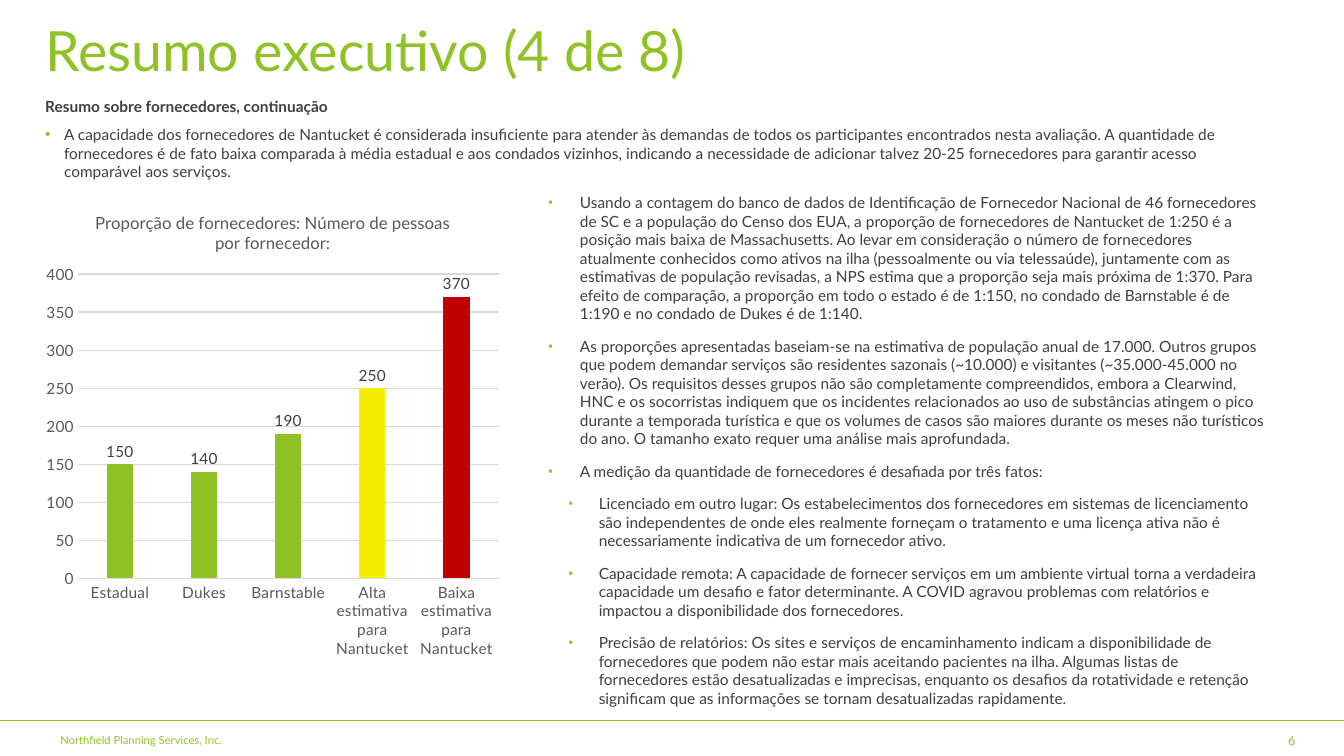
from dataclasses import dataclass

from lxml.etree import SubElement
from pptx import Presentation
from pptx.chart.data import CategoryChartData
from pptx.dml.color import RGBColor
from pptx.enum.chart import XL_CHART_TYPE, XL_LABEL_POSITION, XL_TICK_MARK
from pptx.enum.shapes import MSO_CONNECTOR
from pptx.enum.text import MSO_ANCHOR, MSO_AUTO_SIZE, PP_ALIGN
from pptx.oxml import parse_xml
from pptx.oxml.ns import nsdecls, qn
from pptx.util import Pt

GREEN = RGBColor(0x90, 0xC2, 0x26)
YELLOW = RGBColor(0xF4, 0xEE, 0x00)
RED = RGBColor(0xC0, 0x00, 0x00)
DARK = RGBColor(0x3F, 0x3F, 0x3F)
LABEL = RGBColor(0x40, 0x40, 0x40)
GRAY = RGBColor(0x59, 0x59, 0x59)
GRID = RGBColor(0xD9, 0xD9, 0xD9)
FACE = "Lato"
WIDE, HIGH = 960, 540
LEFT, TOP, RULE = 25.2, 134.6, 514.8


@dataclass
class Box:
    x: float
    y: float
    w: float
    h: float

    def spans(self) -> tuple:
        return Pt(self.x), Pt(self.y), Pt(self.w), Pt(self.h)


@dataclass
class Style:
    """Bullet paragraph: left margin, hang, mark, mark size and gap above."""
    margin: float
    hang: float
    mark: str
    scale: int
    gap: float


@dataclass
class Bar:
    name: str
    value: int
    color: RGBColor


@dataclass
class Note:
    box: Box
    text: str
    size: float
    align: PP_ALIGN
    wrap: bool


INTRO = Style(13.5, 13.5, "•", 100, 7.2)
LEVELS = [Style(22.5, 22.5, "▪", 80, 10), Style(36, 21.6, "▪", 80, 10)]

BARS = [
    Bar("Estadual", 150, GREEN),
    Bar("Dukes", 140, GREEN),
    Bar("Barnstable", 190, GREEN),
    Bar("Alta estimativa para Nantucket", 250, YELLOW),
    Bar("Baixa estimativa para Nantucket", 370, RED),
]

LEAD = [
    "Resumo sobre fornecedores, continuação",
    "A capacidade dos fornecedores de Nantucket é considerada insuficiente para atender às demandas de todos os participantes encontrados nesta avaliação. A quantidade de fornecedores é de fato baixa comparada à média estadual e aos condados vizinhos, indicando a necessidade de adicionar talvez 20-25 fornecedores para garantir acesso comparável aos serviços.",
]

POINTS = [
    (0, "Usando a contagem do banco de dados de Identificação de Fornecedor Nacional de 46 fornecedores de SC e a população do Censo dos EUA, a proporção de fornecedores de Nantucket de 1:250 é a posição mais baixa de Massachusetts. Ao levar em consideração o número de fornecedores atualmente conhecidos como ativos na ilha (pessoalmente ou via telessaúde), juntamente com as estimativas de população revisadas, a NPS estima que a proporção seja mais próxima de 1:370. Para efeito de comparação, a proporção em todo o estado é de 1:150, no condado de Barnstable é de 1:190 e no condado de Dukes é de 1:140."),
    (0, "As proporções apresentadas baseiam-se na estimativa de população anual de 17.000. Outros grupos que podem demandar serviços são residentes sazonais (~10.000) e visitantes (~35.000-45.000 no verão). Os requisitos desses grupos não são completamente compreendidos, embora a Clearwind, HNC e os socorristas indiquem que os incidentes relacionados ao uso de substâncias atingem o pico durante a temporada turística e que os volumes de casos são maiores durante os meses não turísticos do ano. O tamanho exato requer uma análise mais aprofundada."),
    (0, "A medição da quantidade de fornecedores é desafiada por três fatos:"),
    (1, "Licenciado em outro lugar: Os estabelecimentos dos fornecedores em sistemas de licenciamento são independentes de onde eles realmente forneçam o tratamento e uma licença ativa não é necessariamente indicativa de um fornecedor ativo."),
    (1, "Capacidade remota: A capacidade de fornecer serviços em um ambiente virtual torna a verdadeira capacidade um desafio e fator determinante. A COVID agravou problemas com relatórios e impactou a disponibilidade dos fornecedores."),
    (1, "Precisão de relatórios: Os sites e serviços de encaminhamento indicam a disponibilidade de fornecedores que podem não estar mais aceitando pacientes na ilha. Algumas listas de fornecedores estão desatualizadas e imprecisas, enquanto os desafios da rotatividade e retenção significam que as informações se tornam desatualizadas rapidamente."),
]

NOTES = [
    Note(Box(36, 519.8, 162, 17.3), "Northfield Planning Services, Inc.", 8, PP_ALIGN.LEFT, False),
    Note(Box(878.4, RULE, 54, 28.8), "6", 9, PP_ALIGN.RIGHT, True),
]


def place(shape, box: Box) -> None:
    shape.left, shape.top, shape.width, shape.height = box.spans()


def tint(font, size: float, color: RGBColor, bold: bool = False) -> None:
    font.name, font.size, font.bold = FACE, Pt(size), bold
    font.color.rgb = color


def write(para, text: str, size: float, color: RGBColor, bold: bool = False) -> None:
    para.text = text
    for run in para.runs:
        tint(run.font, size, color, bold)


def bullet(para, style: Style, first: bool = False) -> None:
    props = para._p.get_or_add_pPr()
    props.set("marL", str(Pt(style.margin)))
    props.set("indent", str(-Pt(style.hang)))
    SubElement(SubElement(props, qn("a:buClr")), qn("a:srgbClr"), val=str(GREEN))
    SubElement(props, qn("a:buSzPct"), val=str(style.scale * 1000))
    SubElement(props, qn("a:buFont"), typeface="Arial")
    SubElement(props, qn("a:buChar"), char=style.mark)
    para.space_before = Pt(0 if first else style.gap)


def layout(x: float, y: float, w: float = 0, h: float = 0):
    """Manual chart layout in fractions of the chart area."""
    inner = '<c:layoutTarget val="inner"/>' if w else ""
    size = f'<c:w val="{w}"/><c:h val="{h}"/>' if w else ""
    return parse_xml(
        f'<c:layout {nsdecls("c")}><c:manualLayout>{inner}<c:xMode val="edge"/><c:yMode val="edge"/>'
        f'<c:x val="{x}"/><c:y val="{y}"/>{size}</c:manualLayout></c:layout>')


def draw_chart(slide, box: Box, bars: list[Bar]) -> None:
    data = CategoryChartData()
    data.categories = [bar.name for bar in bars]
    data.add_series("Series 1", [bar.value for bar in bars])
    chart = slide.shapes.add_chart(XL_CHART_TYPE.COLUMN_CLUSTERED, *box.spans(), data).chart
    chart.has_legend = False
    tint(chart.font, 11, GRAY)
    chart.has_title = True
    write(chart.chart_title.text_frame.paragraphs[0],
          "Proporção de fornecedores: Número de pessoas por fornecedor:", 12, GRAY)
    chart.chart_title.include_in_layout = False

    # Axes
    cats, vals = chart.category_axis, chart.value_axis
    for axis in (cats, vals):
        axis.major_tick_mark = axis.minor_tick_mark = XL_TICK_MARK.NONE
        tint(axis.tick_labels.font, 11, GRAY)
    vals.minimum_scale, vals.maximum_scale, vals.major_unit = 0, 400, 50
    vals.format.line.fill.background()
    for line in (cats.format.line, vals.major_gridlines.format.line):
        line.color.rgb, line.width = GRID, Pt(0.75)

    # Bars and labels
    plot = chart.plots[0]
    plot.gap_width, plot.overlap, plot.vary_by_categories = 219, -27, False
    series = plot.series[0]
    series.format.fill.solid()
    series.format.fill.fore_color.rgb = GREEN
    for i, bar in enumerate(bars):
        if bar.color != GREEN:
            fill = series.points[i].format.fill
            fill.solid()
            fill.fore_color.rgb = bar.color
    labels = series.data_labels
    labels.show_value, labels.position = True, XL_LABEL_POSITION.OUTSIDE_END
    tint(labels.font, 11, LABEL)

    # Plot area
    area = chart._chartSpace.chart.plotArea
    for old in area.findall(qn("c:layout")):
        area.remove(old)
    area.insert(0, layout(0.09, 0.18, 0.89, 0.64))
    head = chart.chart_title._element
    for old in head.findall(qn("c:layout")):
        head.remove(old)
    head.find(qn("c:tx")).addnext(layout(0.12, 0.04))


def draw_note(slide, note: Note) -> None:
    frame = slide.shapes.add_textbox(*note.box.spans()).text_frame
    frame.word_wrap, frame.vertical_anchor = note.wrap, MSO_ANCHOR.MIDDLE
    para = frame.paragraphs[0]
    write(para, note.text, note.size, GREEN)
    para.alignment = note.align


def main() -> None:
    deck = Presentation()
    deck.slide_width, deck.slide_height = Pt(WIDE), Pt(HIGH)
    slide = deck.slides.add_slide(deck.slide_layouts[1])

    # Footer
    rule = slide.shapes.add_connector(MSO_CONNECTOR.STRAIGHT, 0, Pt(RULE), Pt(WIDE), Pt(RULE))
    rule.line.color.rgb, rule.line.width = GREEN, Pt(1)
    SubElement(rule._element.spPr, qn("a:effectLst"))
    for note in NOTES:
        draw_note(slide, note)

    # Title
    title = slide.shapes.title
    place(title, Box(LEFT, 10.1, 815, 50.4))
    frame = title.text_frame
    frame.auto_size, frame.vertical_anchor = MSO_AUTO_SIZE.NONE, MSO_ANCHOR.MIDDLE
    write(frame.paragraphs[0], "Resumo executivo (4 de 8)", 39.6, GREEN)
    frame.paragraphs[0].alignment = PP_ALIGN.LEFT

    # Lead text
    frame = slide.shapes.add_textbox(*Box(LEFT, 65.5, 868.3, 54.7).spans()).text_frame
    frame.word_wrap = True
    write(frame.paragraphs[0], LEAD[0], 11, DARK, True)
    para = frame.add_paragraph()
    bullet(para, INTRO)
    write(para, LEAD[1], 11, DARK)

    # Body list
    body = slide.placeholders[1]
    place(body, Box(384.5, TOP, 528.5, 352.8))
    frame = body.text_frame
    frame.auto_size = MSO_AUTO_SIZE.NONE
    for i, (level, text) in enumerate(POINTS):
        para = frame.add_paragraph() if i else frame.paragraphs[0]
        para.level = level
        bullet(para, LEVELS[level], i == 0)
        write(para, text, 11, DARK)

    draw_chart(slide, Box(LEFT, TOP, 337.7, 339.8), BARS)
    deck.save("out.pptx")


if __name__ == "__main__":
    main()
